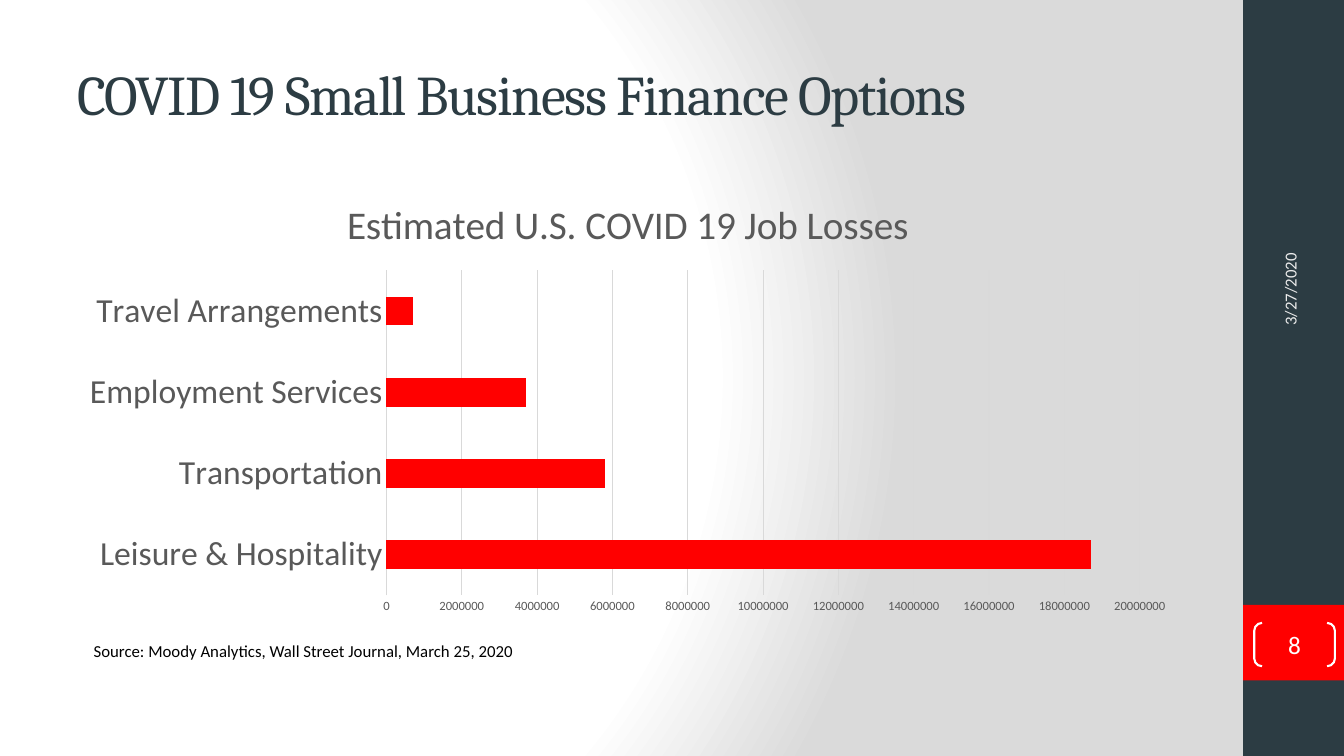
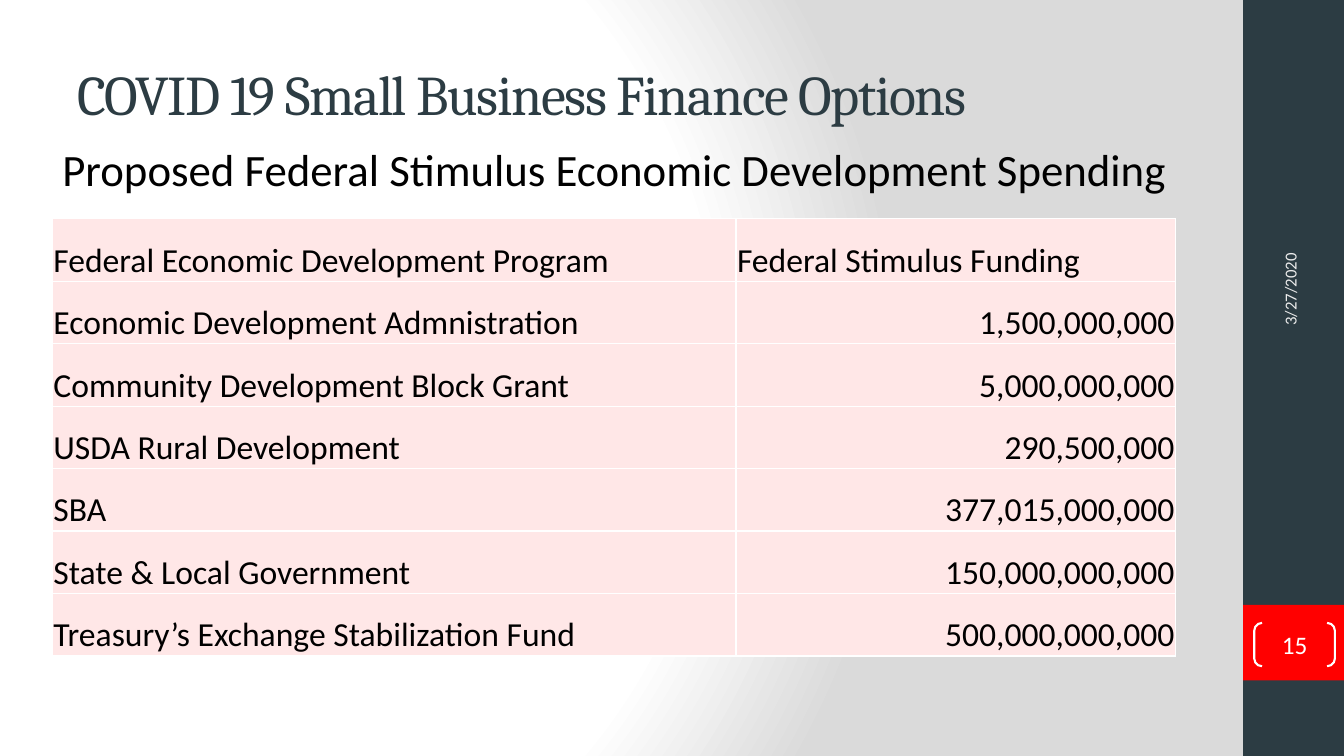
from lxml import etree
from pptx import Presentation
from pptx.chart.data import CategoryChartData
from pptx.dml.color import RGBColor
from pptx.enum.chart import XL_CHART_TYPE, XL_TICK_MARK
from pptx.enum.shapes import MSO_SHAPE
from pptx.enum.text import MSO_ANCHOR, MSO_AUTO_SIZE, PP_ALIGN
from pptx.oxml import parse_xml
from pptx.oxml.ns import nsdecls, qn
from pptx.util import Inches, Pt

LEFT, RIGHT, CENTER = PP_ALIGN.LEFT, PP_ALIGN.RIGHT, PP_ALIGN.CENTER
MIDDLE, BOTTOM = MSO_ANCHOR.MIDDLE, MSO_ANCHOR.BOTTOM
NO_TICK = XL_TICK_MARK.NONE

COLORS = {"white": "FFFFFF", "shade": "DADADA", "slate": "2C3C43", "red": "FF0000",
          "date": "EBEBEB", "black": "000000", "axis": "595959", "grid": "D9D9D9",
          "cell": "FFE7E7"}
HEAD_FONT, BODY_FONT = "Cambria", "Calibri"

TITLE = "COVID 19 Small Business Finance Options"
DATE = "3/27/2020"
BANDS = [("slate", 0, 7.5), ("red", 6, 0.75)]

CHART_TITLE = "Estimated U.S. COVID 19 Job Losses"
JOB_LOSSES = [("Leisure & Hospitality", 18700000), ("Transportation", 5800000),
              ("Employment Services", 3700000), ("Travel Arrangements", 700000)]
SOURCE = "Source: Moody Analytics, Wall Street Journal, March 25, 2020"

SUBTITLE = "Proposed Federal Stimulus Economic Development Spending"
FUNDING = [("Federal Economic Development Program", "Federal Stimulus Funding"),
           ("Economic Development Admnistration", "1,500,000,000"),
           ("Community Development Block Grant", "5,000,000,000"),
           ("USDA Rural Development", "290,500,000"),
           ("SBA", "377,015,000,000"),
           ("State & Local Government", "150,000,000,000"),
           ("Treasury’s Exchange Stabilization Fund", "500,000,000,000")]
COLUMN_WIDTHS = (6.78, 4.36)
ROW_HEIGHT = 0.62


def rgb(name):
    return RGBColor.from_string(COLORS[name])


def box(left, top, width, height):
    return [Inches(v) for v in (left, top, width, height)]


def set_font(font, size, color, name=BODY_FONT):
    font.size, font.name, font.bold = Pt(size), name, False
    font.color.rgb = rgb(color)


def write(tf, text, size, color, align=LEFT, name=BODY_FONT):
    tf.text = text
    p = tf.paragraphs[0]
    p.alignment = align
    set_font(p.runs[0].font, size, color, name)
    return p.runs[0]


def add_text(slide, place, text, size, color):
    sp = slide.shapes.add_textbox(*box(*place))
    sp.text_frame.word_wrap = False
    write(sp.text_frame, text, size, color)
    return sp


def set_background(master):
    """Radial gradient behind every slide."""
    stops = "".join(
        f'<a:gs pos="{pos * 1000}"><a:srgbClr val="{COLORS[color]}"/></a:gs>'
        for pos, color in ((0, "white"), (75, "white"), (100, "shade")))
    bg = parse_xml(
        f'<p:bg {nsdecls("p", "a")}><p:bgPr><a:gradFill rotWithShape="1">'
        f'<a:gsLst>{stops}</a:gsLst><a:path path="circle">'
        '<a:fillToRect l="20000" t="50000" r="100000" b="50000"/></a:path>'
        '</a:gradFill><a:effectLst/></p:bgPr></p:bg>')
    c_sld = master.element.cSld
    for old in c_sld.findall(qn("p:bg")):
        c_sld.remove(old)
    c_sld.insert(0, bg)


def add_frame(slide, number):
    """Side bands, title, date and page number."""
    for color, top, height in BANDS:
        sp = slide.shapes.add_shape(MSO_SHAPE.RECTANGLE, *box(12.33, top, 1, height))
        sp.shadow.inherit = False
        sp.fill.solid()
        sp.fill.fore_color.rgb = rgb(color)
        sp.line.fill.background()

    title = slide.shapes.title
    title.left, title.top, title.width, title.height = box(0.67, 0.3, 11.11, 1.25)
    tf = title.text_frame
    tf.auto_size, tf.vertical_anchor = MSO_AUTO_SIZE.NONE, MIDDLE
    r = write(tf, TITLE, 40, "slate", name=HEAD_FONT)
    r.font._element.set("spc", "-100")

    date = add_text(slide, (11.46, 1.73, 2.67, 0.53), DATE, 12, "date")
    date.text_frame.word_wrap = True
    date.text_frame.vertical_anchor = MIDDLE
    date.rotation = 270

    page = slide.shapes.add_shape(MSO_SHAPE.DOUBLE_BRACKET, *box(12.44, 6.18, 0.8, 0.43))
    page.shadow.inherit = False
    page.adjustments[0] = 0.18
    page.fill.background()
    page.line.color.rgb, page.line.width = rgb("white"), Pt(1.5)
    tf = page.text_frame
    tf.margin_left = tf.margin_right = tf.margin_top = tf.margin_bottom = 0
    tf.vertical_anchor = MIDDLE
    write(tf, str(number), 18, "white", CENTER)


def add_loss_chart(slide):
    data = CategoryChartData()
    data.categories = [name for name, _ in JOB_LOSSES]
    data.add_series(CHART_TITLE, [loss for _, loss in JOB_LOSSES])
    chart = slide.shapes.add_chart(XL_CHART_TYPE.BAR_CLUSTERED,
                                   *box(0.67, 1.75, 11.11, 4.43), data).chart
    set_font(chart.font, 10, "black")
    chart.has_legend = False
    chart.has_title = True
    write(chart.chart_title.text_frame, CHART_TITLE, 28, "axis", CENTER)
    chart.chart_title.include_in_layout = False

    plot = chart.plots[0]
    plot.gap_width, plot.vary_by_categories = 182, False
    fill = plot.series[0].format.fill
    fill.solid()
    fill.fore_color.rgb = rgb("red")

    cat, val = chart.category_axis, chart.value_axis
    for axis, size in ((cat, 24), (val, 9)):
        axis.major_tick_mark = axis.minor_tick_mark = NO_TICK
        set_font(axis.tick_labels.font, size, "axis")
    val.has_major_gridlines = True
    for line in (cat.format.line, val.major_gridlines.format.line):
        line.color.rgb, line.width = rgb("grid"), Pt(0.75)
    val.format.line.fill.background()
    val.minimum_scale, val.maximum_scale, val.major_unit = 0, 20000000, 2000000


def set_borders(cell):
    tc_pr = cell._tc.get_or_add_tcPr()
    for i, side in enumerate(("lnL", "lnR", "lnT", "lnB")):
        ln = etree.Element(qn(f"a:{side}"), w=str(Pt(1)))
        fill = etree.SubElement(ln, qn("a:solidFill"))
        etree.SubElement(fill, qn("a:srgbClr"), val=COLORS["white"])
        tc_pr.insert(i, ln)


def add_funding_table(slide):
    table = slide.shapes.add_table(
        len(FUNDING), len(COLUMN_WIDTHS),
        *box(0.52, 2.17, sum(COLUMN_WIDTHS), ROW_HEIGHT * len(FUNDING))).table
    table.first_row = table.horz_banding = False
    for col, width in zip(table.columns, COLUMN_WIDTHS):
        col.width = Inches(width)
    for i, row in enumerate(FUNDING):
        for j, text in enumerate(row):
            cell = table.cell(i, j)
            cell.fill.solid()
            cell.fill.fore_color.rgb = rgb("cell")
            set_borders(cell)
            cell.margin_left = cell.margin_right = cell.margin_top = Inches(0.01)
            cell.margin_bottom = 0
            cell.vertical_anchor = BOTTOM
            write(cell.text_frame, text, 24, "black", RIGHT if i and j else LEFT)


def main():
    prs = Presentation()
    prs.slide_width, prs.slide_height = Inches(13.33), Inches(7.5)
    set_background(prs.slide_master)
    title_only = prs.slide_layouts[5]

    losses = prs.slides.add_slide(title_only)
    add_frame(losses, 8)
    add_loss_chart(losses)
    add_text(losses, (0.83, 6.31, 4.41, 0.3), SOURCE, 12, "black")

    funding = prs.slides.add_slide(title_only)
    add_frame(funding, 15)
    add_text(funding, (0.52, 1.36, 11.27, 0.64), SUBTITLE, 32, "black")
    add_funding_table(funding)

    prs.save("out.pptx")


if __name__ == "__main__":
    main()
